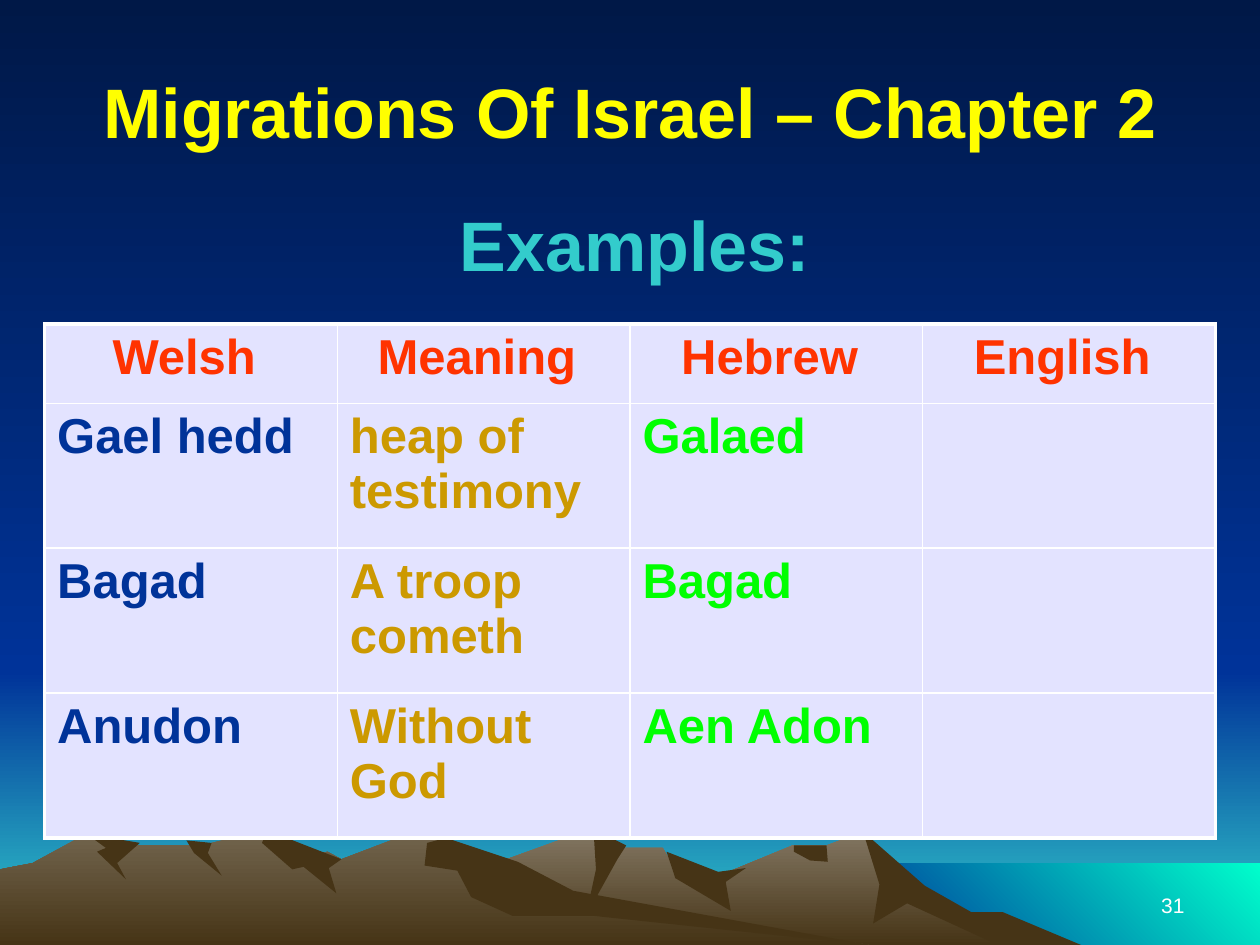
from lxml.etree import SubElement
from pptx import Presentation
from pptx.dml.color import RGBColor
from pptx.enum.shapes import MSO_SHAPE
from pptx.enum.text import MSO_ANCHOR as ANCHOR, PP_ALIGN as ALIGN
from pptx.oxml.ns import qn
from pptx.util import Cm, Pt

NIGHT = RGBColor(0x00, 0x18, 0x47)
NAVY = RGBColor(0x00, 0x33, 0x99)
TEAL = RGBColor(0x33, 0xCC, 0xCC)
AQUA = RGBColor(0x00, 0xFF, 0xCC)
BROWN = RGBColor(0x46, 0x34, 0x16)
BACK_TOP = RGBColor(0x84, 0x78, 0x64)
FRONT_TOP = RGBColor(0x73, 0x66, 0x4F)
LAVENDER = RGBColor(0xE3, 0xE3, 0xFF)
WHITE = RGBColor(0xFF, 0xFF, 0xFF)
YELLOW = RGBColor(0xFF, 0xFF, 0x00)
RED = RGBColor(0xFF, 0x33, 0x00)
GOLD = RGBColor(0xCC, 0x99, 0x00)
GREEN = RGBColor(0x00, 0xFF, 0x00)

# Content
TITLE = "Migrations Of Israel – Chapter 2"
SUBTITLE = "Examples:"
NUMBER = "31"
ROWS = [
    ("Welsh ", "Meaning ", "Hebrew ", "English "),
    ("Gael hedd", "heap of testimony", "Galaed", ""),
    ("Bagad", "A troop cometh", "Bagad", ""),
    ("Anudon", "Without God", "Aen Adon", ""),
]
COLUMN_COLORS = [NAVY, GOLD, GREEN, GREEN]

# Backdrop panels: left, top, right, bottom (cm), first colour, last colour, angle
WIDTH, HEIGHT, HORIZON = 25.4, 19.05, 13.54
PANELS = [
    (0, HORIZON, WIDTH, HEIGHT, NAVY, TEAL, 270),
    (0, 0, WIDTH, HORIZON, NIGHT, NAVY, 270),
    (17.35, 17.4, WIDTH, HEIGHT, NAVY, AQUA, 45),
]

# Mountains, back to front: colour at the top, outline in 1/100 inch
MOUNTAINS = [
    # back range and its shadows
    (BACK_TOP, [
        (821, 750), (764, 723), (723, 698), (685, 660), (656, 671), (629, 671), (566, 697),
        (536, 690), (526, 673), (486, 673), (468, 658), (394, 685), (327, 709), (258, 750)]),
    (BROWN, [
        (858, 750), (796, 724), (771, 724), (734, 703), (685, 660), (698, 702), (693, 733),
        (720, 717), (792, 750)]),
    (BROWN, [(471, 658), (473, 690), (465, 727), (490, 682), (497, 671)]),
    (BROWN, [(529, 676), (536, 697), (580, 723), (576, 700), (592, 689), (570, 692)]),
    (BROWN, [(630, 671), (630, 676), (643, 683), (657, 684), (656, 671)]),
    # front range and its shadows
    (FRONT_TOP, [
        (690, 750), (432, 712), (354, 665), (318, 664), (271, 682), (260, 676), (236, 681),
        (212, 658), (160, 671), (94, 671), (68, 662), (26, 685), (0, 690), (0, 750)]),
    (BROWN, [
        (212, 659), (208, 669), (232, 690), (241, 688), (267, 709), (261, 689), (271, 682)]),
    (BROWN, [
        (354, 665), (339, 669), (337, 687), (363, 691), (374, 712), (407, 727), (472, 727),
        (690, 750), (455, 707), (411, 684)]),
    (BROWN, [(148, 667), (154, 677), (176, 695), (165, 677), (168, 669)]),
    (BROWN, [(69, 662), (84, 673), (77, 676), (100, 698), (93, 685), (111, 669)]),
]


def paint(sp, first, last, angle=270):
    """Fill a shape, with a gradient where the two colours differ."""
    sp.shadow.inherit = False
    sp.line.fill.background()
    if first == last:
        sp.fill.solid()
        sp.fill.fore_color.rgb = first
        return
    sp.fill.gradient()
    sp.fill.gradient_angle = angle
    for stop, color in zip(sp.fill.gradient_stops, (first, last)):
        stop.color.rgb = color


def write(tf, text, size=28, color=WHITE, bold=True, align=ALIGN.LEFT):
    tf.word_wrap = True
    p = tf.paragraphs[0]
    p.alignment = align
    r = p.add_run()
    r.text = text
    r.font.name = "Arial"
    r.font.size = Pt(size)
    r.font.bold = bold
    r.font.color.rgb = color


def add_text(s, box, text, anchor=ANCHOR.MIDDLE, **style):
    tf = s.shapes.add_textbox(*map(Cm, box)).text_frame
    tf.vertical_anchor = anchor
    write(tf, text, **style)


def set_borders(cell, widths):
    """Draw white cell borders; widths gives points for each side tag."""
    tcPr = cell._tc.get_or_add_tcPr()
    for i, (tag, width) in enumerate(widths.items()):
        ln = SubElement(tcPr, qn(f"a:{tag}"), w=str(Pt(width)))
        fill = SubElement(ln, qn("a:solidFill"))
        SubElement(fill, qn("a:srgbClr"), val=str(WHITE))
        tcPr.insert(i, ln)


def add_examples(s):
    last_row, last_col = len(ROWS) - 1, len(ROWS[0]) - 1
    table = s.shapes.add_table(len(ROWS), len(ROWS[0]), Cm(0.9), Cm(6.53),
                               Cm(23.6), Cm(10.36)).table
    table.horz_banding = False
    for i, row in enumerate(table.rows):
        row.height = Cm(2.92 if i else 1.6)
        for j, cell in enumerate(row.cells):
            cell.fill.solid()
            cell.fill.fore_color.rgb = LAVENDER
            edges = {"lnL": j == 0, "lnR": j == last_col, "lnT": i == 0, "lnB": i == last_row}
            set_borders(cell, {tag: 2.25 if outer else 1 for tag, outer in edges.items()})
            if ROWS[i][j]:
                write(cell.text_frame, ROWS[i][j], color=COLUMN_COLORS[j] if i else RED,
                      align=ALIGN.LEFT if i else ALIGN.CENTER)


def main():
    prs = Presentation()
    prs.slide_width, prs.slide_height = Cm(WIDTH), Cm(HEIGHT)
    s = prs.slides.add_slide(prs.slide_layouts[6])

    # Sky, horizon and water
    for left, top, right, bottom, *colors in PANELS:
        box = (left, top, right - left, bottom - top)
        paint(s.shapes.add_shape(MSO_SHAPE.RECTANGLE, *map(Cm, box)), *colors)

    # Mountains
    for top, points in MOUNTAINS:
        outline = s.shapes.build_freeform(*points[0], scale=Cm(2.54) / 100)
        outline.add_line_segments(points[1:], close=True)
        paint(outline.convert_to_shape(), top, BROWN)

    # Texts and table
    add_text(s, (18.2, 17.35, 5.93, 1.27), NUMBER, anchor=ANCHOR.BOTTOM,
             size=12, bold=False, align=ALIGN.RIGHT)
    add_text(s, (1.27, 0.64, 22.86, 3.18), TITLE, size=40, color=YELLOW, align=ALIGN.CENTER)
    add_examples(s)
    add_text(s, (4.5, 3.94, 16.6, 1.95), SUBTITLE, size=40, color=TEAL, align=ALIGN.CENTER)

    prs.save("out.pptx")


if __name__ == "__main__":
    main()
